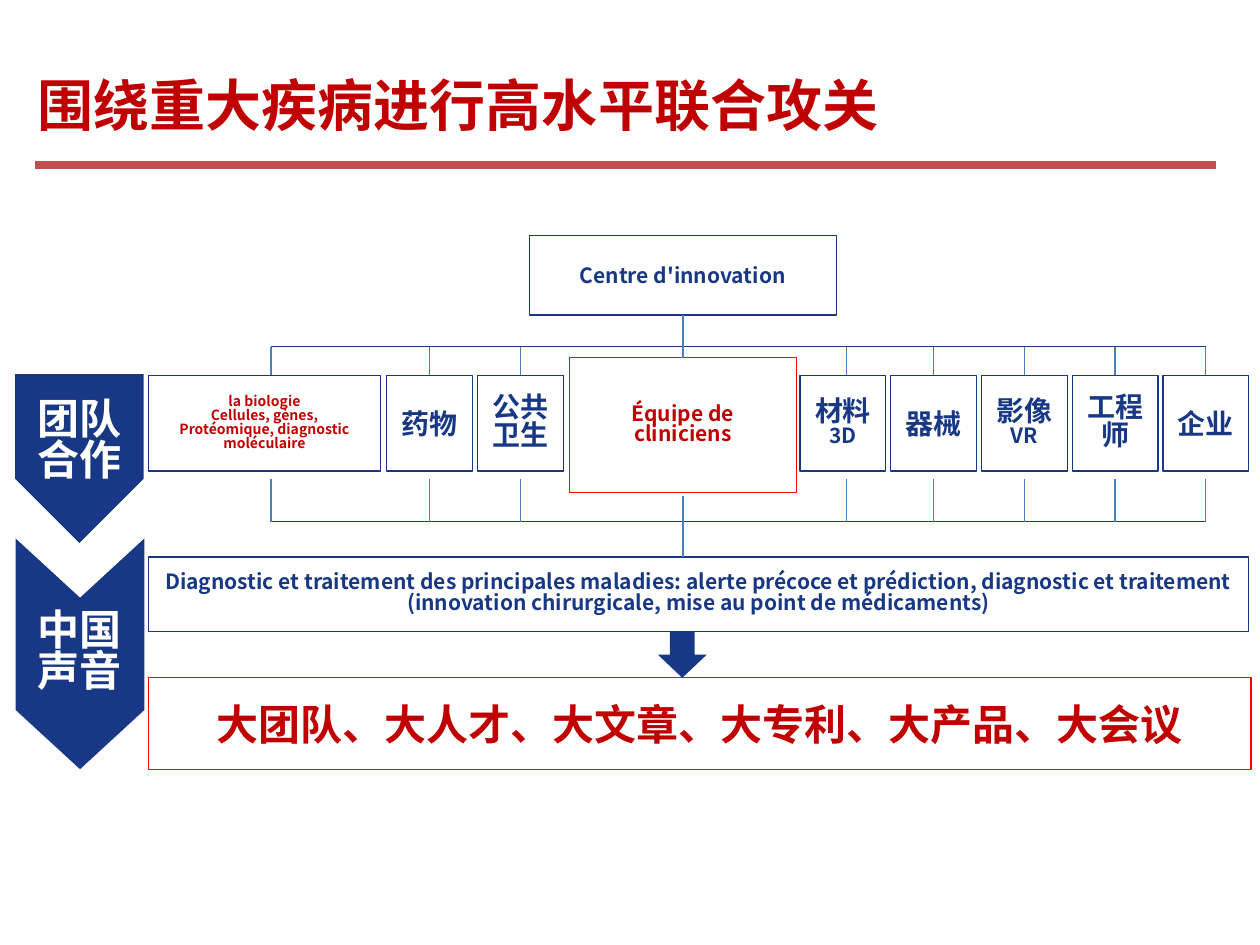
import pptx
import pptx.util
import pptx.dml.color
import pptx.enum.shapes
import pptx.enum.text
import pptx.oxml.ns
import lxml.etree

Inches = pptx.util.Inches
RGBColor = pptx.dml.color.RGBColor
SHAPES = pptx.enum.shapes.MSO_SHAPE
ALIGN = pptx.enum.text.PP_ALIGN
FONT = "Noto Sans CJK SC"
NAVY = RGBColor(0x18, 0x38, 0x85)
BUS_NAVY = RGBColor(0x1E, 0x3C, 0x78)
STUB_BLUE = RGBColor(0x4B, 0x7E, 0xBC)
DARK_RED = RGBColor(0xC0, 0x00, 0x00)
BRIGHT_RED = RGBColor(0xFF, 0x00, 0x00)
RULE_RED = RGBColor(0xC0, 0x50, 0x4D)
WHITE = RGBColor(0xFF, 0xFF, 0xFF)

prs = pptx.Presentation()
prs.slide_width, prs.slide_height = Inches(10), Inches(7.5)
slide = prs.slides.add_slide(prs.slide_layouts[5])


def write_text(shape, text, size=12, color=NAVY, align=ALIGN.CENTER, spacing=1.0, last_size=None):
    frame = shape.text_frame
    frame.word_wrap = True
    frame.vertical_anchor = pptx.enum.text.MSO_ANCHOR.MIDDLE
    lines = text.split("\n")
    for index, line in enumerate(lines):
        paragraph = frame.paragraphs[0] if index == 0 else frame.add_paragraph()
        paragraph.alignment = align
        paragraph.line_spacing = spacing
        run = paragraph.add_run()
        run.text = line
        is_last = index == len(lines) - 1
        run.font.size = pptx.util.Pt(last_size if last_size and is_last else size)
        run.font.bold = True
        run.font.name = FONT
        run.font.color.rgb = color
        east_asian = lxml.etree.SubElement(run.font._element, pptx.oxml.ns.qn("a:ea"))
        east_asian.set("typeface", FONT)


def draw_line(x1, y1, x2, y2, color=STUB_BLUE, width=0.75):
    line = slide.shapes.add_connector(
        pptx.enum.shapes.MSO_CONNECTOR.STRAIGHT, Inches(x1), Inches(y1), Inches(x2), Inches(y2))
    line.line.color.rgb = color
    line.line.width = pptx.util.Pt(width)
    lxml.etree.SubElement(line._element.spPr, pptx.oxml.ns.qn("a:effectLst"))
    return line


draw_line(0.28, 1.31, 9.65, 1.31, RULE_RED, 4.5)
title = slide.shapes.title
title.left, title.top, title.width, title.height = Inches(0.2), Inches(0.52), Inches(7.17), Inches(0.61)
write_text(title, "围绕重大疾病进行高水平联合攻关", size=32, color=DARK_RED, align=ALIGN.LEFT)

TEAM_TOP, TEAM_WIDTH, TEAM_HEIGHT, TEAM_PITCH = 2.98, 0.68, 0.76, 0.72
boxes = [
    ("大团队、大人才、大文章、大专利、大产品、大会议", 1.18, 5.38, 8.75, 0.73, BRIGHT_RED,
     dict(size=24, color=DARK_RED)),
    ("Centre d'innovation", 4.2, 1.87, 2.44, 0.63, NAVY, {}),
    ("Équipe de cliniciens", 4.52, 2.84, 1.8, 1.07, BRIGHT_RED, dict(color=DARK_RED, spacing=0.82)),
    ("Diagnostic et traitement des principales maladies: alerte précoce et prédiction, "
     "diagnostic et traitement (innovation chirurgicale, mise au point de médicaments)",
     1.18, 4.42, 8.73, 0.59, NAVY, dict(spacing=0.82)),
    ("la biologie\nCellules, gènes,\nProtéomique, diagnostic moléculaire",
     1.18, TEAM_TOP, 1.84, TEAM_HEIGHT, NAVY, dict(size=8, color=DARK_RED, spacing=0.82)),
]
for first_left, teams in [(3.07, ["药物", "公共卫生"]),
                          (6.35, ["材料\n3D", "器械", "影像\nVR", "工程师", "企业"])]:
    for index, team in enumerate(teams):
        text_format = dict(size=16, last_size=12 if "\n" in team else None,
                           spacing=0.82 if len(team) > 2 else 1.0)
        boxes.append((team, first_left + index * TEAM_PITCH, TEAM_TOP,
                      TEAM_WIDTH, TEAM_HEIGHT, NAVY, text_format))

drawn = []
for text, left, top, width, height, outline, text_format in boxes:
    box = slide.shapes.add_shape(SHAPES.RECTANGLE, Inches(left), Inches(top), Inches(width), Inches(height))
    box.shadow.inherit = False
    box.fill.background()
    box.line.color.rgb = outline
    box.line.width = pptx.util.Pt(0.75)
    write_text(box, text, **text_format)
    drawn.append(box)
centre, clinicians = drawn[1:3]
team_boxes = drawn[4:]

UPPER_BUS, LOWER_BUS, LOWER_STUB_TOP, AXIS = 2.75, 4.14, 3.8, 5.42
stubs = [2.15, 3.41, 4.13, 6.72, 7.41, 8.13, 8.85, 9.57]
for bus in (UPPER_BUS, LOWER_BUS):
    draw_line(stubs[0], bus, stubs[-1], bus, BUS_NAVY)
for x, box in zip(stubs, team_boxes):
    drop = draw_line(x, UPPER_BUS, x, TEAM_TOP)
    if abs(box.left + box.width / 2 - Inches(x)) < Inches(0.01):
        drop.end_connect(box, 0)
    draw_line(x, LOWER_BUS, x, LOWER_STUB_TOP)
draw_line(AXIS, 2.5, AXIS, UPPER_BUS).begin_connect(centre, 2)
draw_line(AXIS, UPPER_BUS, AXIS, 2.84).end_connect(clinicians, 0)
draw_line(AXIS, 3.94, AXIS, 4.42)

for kind, text, left, top, width, height in [
        (SHAPES.PENTAGON, "团队合作", -0.04, 3.13, 1.34, 1.02),
        (SHAPES.CHEVRON, "中国声音", -0.28, 4.68, 1.83, 1.02),
        (SHAPES.DOWN_ARROW, "", 5.22, 5.01, 0.39, 0.37)]:
    arrow = slide.shapes.add_shape(kind, Inches(left), Inches(top), Inches(width), Inches(height))
    arrow.shadow.inherit = False
    arrow.fill.solid()
    arrow.fill.fore_color.rgb = NAVY
    arrow.line.fill.background()
    if text:
        arrow.rotation = 90
        arrow.text_frame._txBody.bodyPr.set("vert", "vert270")
        write_text(arrow, text, size=24, color=WHITE, spacing=0.82)
    if kind == SHAPES.CHEVRON:
        arrow.adjustments[0] = 0.46

prs.save("out.pptx")
